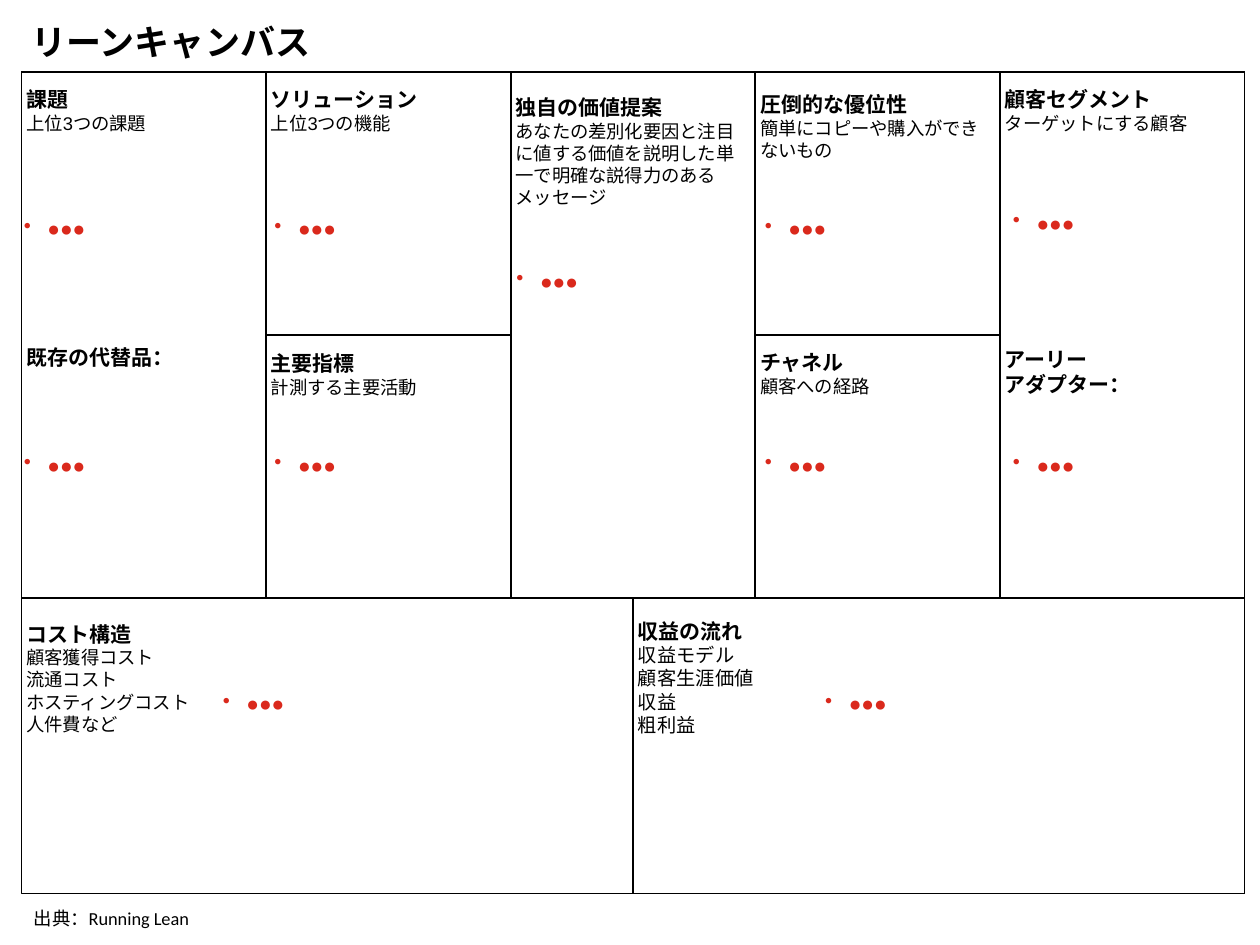
from pptx import Presentation
from pptx.dml.color import RGBColor
from pptx.enum.shapes import MSO_SHAPE
from pptx.enum.text import MSO_ANCHOR, PP_ALIGN
from pptx.oxml.xmlchemy import OxmlElement
from pptx.util import Pt

RECTANGLE = MSO_SHAPE.RECTANGLE
MIDDLE = MSO_ANCHOR.MIDDLE
LEFT_ALIGN = PP_ALIGN.LEFT
BLACK = RGBColor(0x00, 0x00, 0x00)
RED = RGBColor(0xDA, 0x29, 0x1C)
TITLE_ONLY = 5

LEFT, TOP = 12.24, 41
COLUMN, UPPER, LOWER = 139.8, 300.6, 169
WIDTH, HALF = 5 * COLUMN, UPPER / 2
MID = LEFT + WIDTH / 2
columns = [LEFT + i * COLUMN for i in range(5)]

TITLE = "リーンキャンバス"
SOURCE = "出典：Running Lean"
PLACEHOLDER_TEXT = "●●●"

# left, top, width, height, headings, details, detail size
SECTIONS = [
    (columns[0], 42.5, COLUMN, 41, ["課題"], ["上位3つの課題"], 10.5),
    (columns[1], 42.5, COLUMN, 41, ["ソリューション"], ["上位3つの機能"], 10.5),
    (columns[1], 193.5, COLUMN, 41, ["主要指標"], ["計測する主要活動"], 10.5),
    (columns[2], 42.5, COLUMN, 88, ["独自の価値提案"],
     ["あなたの差別化要因と注目に値する価値を説明した単一で明確な説得力のあるメッセージ"], 10.5),
    (columns[3], 43, COLUMN, 58.5, ["圧倒的な優位性"], ["簡単にコピーや購入ができないもの"], 10.5),
    (columns[4], 42.5, COLUMN, 41, ["顧客セグメント"], ["ターゲットにする顧客"], 10.5),
    (columns[3], 193, COLUMN, 41, ["チャネル"], ["顧客への経路"], 10.5),
    (MID, 341.5, COLUMN, 91, ["収益の流れ"],
     ["収益モデル", "顧客生涯価値", "収益", "粗利益"], 11),
    (LEFT, 342, 173.5, 91, ["コスト構造"],
     ["顧客獲得コスト", "流通コスト", "ホスティングコスト", "人件費など"], 10.5),
    (columns[0], 191.5, COLUMN, 25, ["既存の代替品："], [], 10.5),
    (columns[4], 191, COLUMN, 43, ["アーリー", "アダプター："], [], 10.5),
]

BULLET_LEFTS = [10.8, 154, 292.3, 434.2, 576]
BULLETS = [
    (BULLET_LEFTS[0], 116), (BULLET_LEFTS[1], 116), (BULLET_LEFTS[2], 146),
    (BULLET_LEFTS[3], 116), (BULLET_LEFTS[4], 113),
    *[(BULLET_LEFTS[i], 251.3) for i in (0, 1, 3, 4)],
    (124.5, 387.4), (468.7, 387.4),
]

FRAMES = [
    (LEFT, TOP, WIDTH, UPPER + LOWER),
    *[(left, TOP, COLUMN, UPPER) for left in columns],
    (MID, TOP + UPPER, WIDTH / 2, LOWER),
    *[(columns[i], TOP, COLUMN, HALF) for i in (1, 3)],
]


def place(box, left, top, width, height):
    box.left, box.top, box.width, box.height = map(Pt, (left, top, width, height))


def add_frame(page, area):
    frame = page.shapes.add_shape(RECTANGLE, *map(Pt, area))
    frame.shadow.inherit = False
    frame.fill.background()
    frame.line.color.rgb = BLACK
    frame.line.width = Pt(1)


def write(box, lines, inset=None):
    text = box.text_frame
    text.word_wrap = True
    text.vertical_anchor = MIDDLE
    if inset is not None:
        text.margin_left = text.margin_right = Pt(inset)
        text.margin_top = text.margin_bottom = Pt(inset)
    for i, (words, size, name, color, bold) in enumerate(lines):
        para = text.add_paragraph() if i else text.paragraphs[0]
        para.text = words
        para.alignment = LEFT_ALIGN
        font = para.font
        font.size, font.name, font.bold = Pt(size), name, bold
        font.color.rgb = color


def add_text(page, area, lines, inset=None):
    box = page.shapes.add_textbox(*map(Pt, area))
    write(box, lines, inset)
    return box


def add_bullet(para):
    properties = para._p.get_or_add_pPr()
    properties.set("marL", str(Pt(13.5)))
    properties.set("indent", str(Pt(-13.5)))
    bullet = OxmlElement("a:buChar")
    bullet.set("char", "•")
    properties.insert_element_before(bullet, "a:tabLst", "a:defRPr", "a:extLst")


def main():
    deck = Presentation()
    deck.slide_width, deck.slide_height = Pt(720), Pt(540)
    page = deck.slides.add_slide(deck.slide_layouts[TITLE_ONLY])

    title = page.shapes.title
    place(title, 10.8, 8, 447, 31.5)
    write(title, [(TITLE, 20, "Arial", BLACK, True)])

    for area in FRAMES:
        add_frame(page, area)

    for *area, headings, details, size in SECTIONS:
        lines = [(words, 12, "Arial", BLACK, True) for words in headings]
        lines += [(words, size, "Arial", BLACK, False) for words in details]
        add_text(page, area, lines, 2.8)

    for left, top in BULLETS:
        box = add_text(page, (left, top, 135.4, 28.8),
                       [(PLACEHOLDER_TEXT, 12, "Arial", RED, True)], 2.8)
        add_bullet(box.text_frame.paragraphs[0])

    add_text(page, (LEFT, 514, 350, 21), [(SOURCE, 10.5, "Calibri", BLACK, False)])
    deck.save("out.pptx")


if __name__ == "__main__":
    main()
